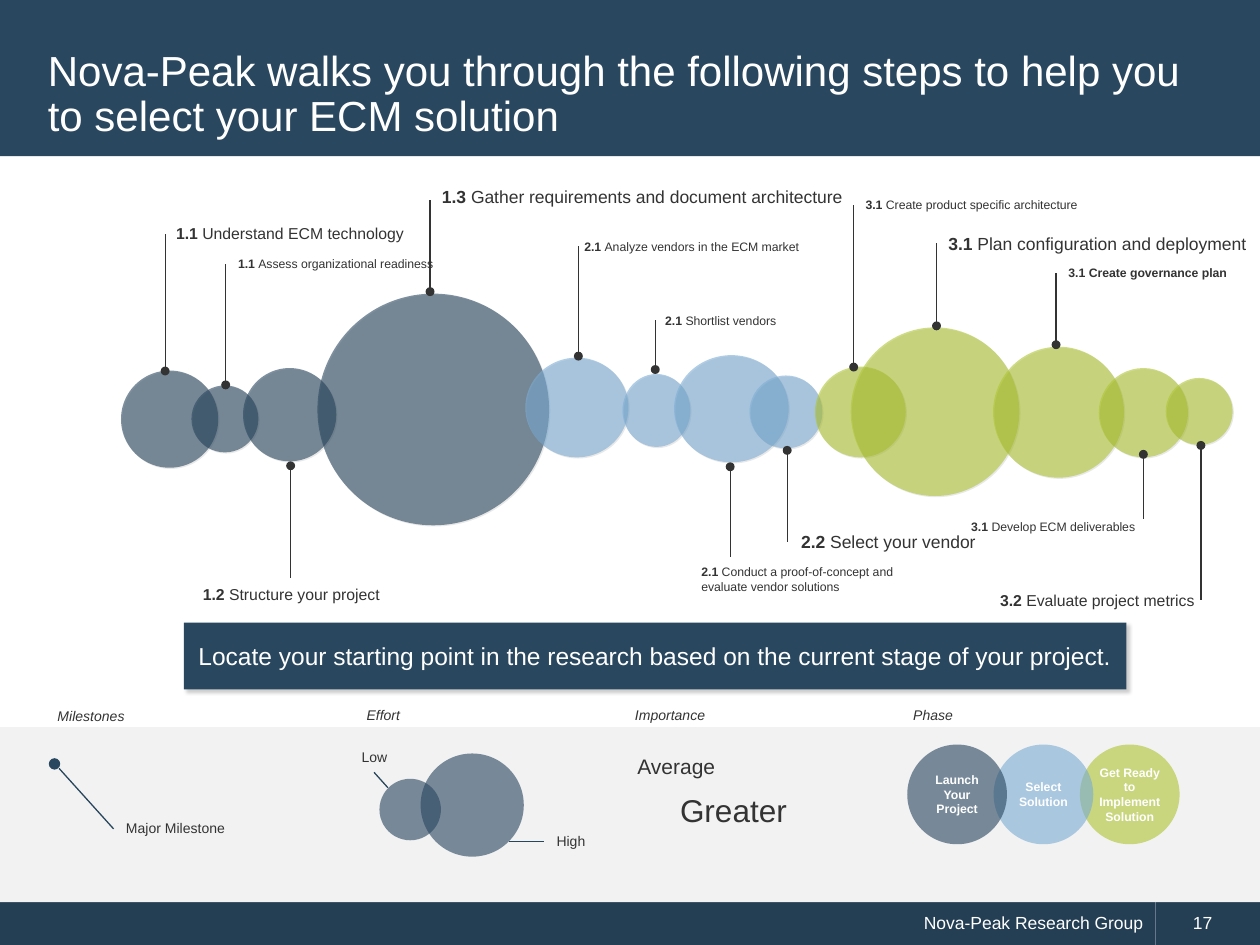
from lxml import etree
from pptx import Presentation
from pptx import util as u
from pptx.dml import color
from pptx.enum import shapes, text
from pptx.oxml import ns

NAVY, SKY, LIME, INK = "29475F", "7CADD4", "B0C534", "333333"
LEADER, DARK, PALE, WHITE = "27465E", "243F54", "F2F2F2", "FFFFFF"
LINE_HEIGHT = {7: 0.56, 8: 0.61, 9: 0.64, 10: 0.69, 12: 0.76, 18: 1.02}
OVAL, RECT = shapes.MSO_SHAPE.OVAL, shapes.MSO_SHAPE.RECTANGLE

# phase colour, bubble box, dot centre, leader end, label place and width, size, number, name
STEPS = [
    (NAVY, (2.44, 4.32, 1.96, 1.96), (3.33, 4.33), 1.57, (3.30, 1.24, 5.23), 9,
     "1.1", "Understand ECM technology"),
    (NAVY, (3.86, 4.62, 1.35, 1.35), (4.55, 4.61), 2.18, (4.55, 1.90, 4.65), 7,
     "1.1", "Assess organizational readiness"),
    (NAVY, (4.90, 4.27, 1.88, 1.88), (5.86, 6.24), 8.51, (3.84, 8.51, 4.19), 9,
     "1.2", "Structure your project"),
    (NAVY, (6.40, 2.77, 4.67, 4.67), (8.67, 2.73), 0.89, (8.66, 0.48, 8.64), 10,
     "1.3", "Gather requirements and document architecture"),
    (SKY, (10.59, 4.06, 2.08, 2.01), (11.66, 4.03), 1.80, (11.53, 1.55, 5.05), 7,
     "2.1", "Analyze vendors in the ECM market"),
    (SKY, (12.55, 4.39, 1.37, 1.47), (13.21, 4.30), 3.30, (13.16, 3.05, 2.87), 7,
     "2.1", "Shortlist vendors"),
    (SKY, (13.59, 4.01, 2.31, 2.16), (14.72, 6.26), 8.08, (13.89, 8.10, 4.45), 7,
     "2.1", "Conduct a proof-of-concept and evaluate vendor solutions"),
    (SKY, (15.11, 4.42, 1.47, 1.47), (15.87, 5.93), 7.77, (15.90, 7.42, 4.06), 10,
     "2.2", "Select your vendor"),
    (LIME, (16.43, 4.24, 1.83, 1.83), (17.21, 4.25), 0.99, (17.20, 0.71, 4.93), 7,
     "3.1", "Create product specific architecture"),
    (LIME, (17.15, 3.45, 3.40, 3.40), (18.88, 3.42), 1.75, (18.87, 1.42, 6.60), 10,
     "3.1", "Plan configuration and deployment"),
    (LIME, (20.02, 3.84, 2.64, 2.64), (21.29, 3.80), 2.36, (21.29, 2.08, 3.84), 7,
     "3.1", "Create governance plan"),
    (LIME, (22.15, 4.27, 1.80, 1.80), (23.05, 6.01), 7.31, (19.33, 7.19, 4.04), 7,
     "3.1", "Develop ECM deliverables"),
    (LIME, (23.50, 4.47, 1.35, 1.35), (24.21, 5.83), 8.94, (19.91, 8.64, 4.55), 9,
     "3.2", "Evaluate project metrics"),
]


def rgb(value):
    return color.RGBColor.from_string(value)


def write(frame, words, size=8, ink=INK, bold=False, italic=False, lead=None,
          align=text.PP_ALIGN.LEFT, spacing=None):
    paragraph = frame.paragraphs[0]
    paragraph.alignment = align
    paragraph.line_spacing = spacing
    runs = [(lead + " ", True)] if lead else []
    for part, heavy in runs + [(words, bold)]:
        run = paragraph.add_run()
        run.text = part
        run.font.name, run.font.size = "Arial", u.Pt(size)
        run.font.bold, run.font.italic = heavy, italic
        run.font.color.rgb = rgb(ink)


def label(slide, x, y, width, words, wrap=False, size=8, **style):
    box = slide.shapes.add_textbox(u.Cm(x), u.Cm(y), u.Cm(width), u.Cm(LINE_HEIGHT[size]))
    box.text_frame.word_wrap = wrap
    box.text_frame.auto_size = text.MSO_AUTO_SIZE.SHAPE_TO_FIT_TEXT
    write(box.text_frame, words, size=size, **style)


def block(slide, kind, x, y, width, height, fill, opacity=None, shadow=None):
    shape = slide.shapes.add_shape(kind, u.Cm(x), u.Cm(y), u.Cm(width), u.Cm(height))
    shape.shadow.inherit = False
    shape.line.fill.background()
    shape.fill.solid()
    shape.fill.fore_color.rgb = rgb(fill)
    properties = shape.element.spPr
    if opacity:
        tone = properties.find(".//" + ns.qn("a:srgbClr"))
        etree.SubElement(tone, ns.qn("a:alpha"), val=str(opacity * 1000))
    if shadow:
        strength, blur, distance, angle = shadow
        cast = etree.SubElement(
            properties.find(ns.qn("a:effectLst")), ns.qn("a:outerShdw"),
            blurRad=str(u.Pt(blur)), dist=str(u.Pt(distance)), dir=str(angle * 60000),
            algn="tl", rotWithShape="0")
        tone = etree.SubElement(cast, ns.qn("a:srgbClr"), val="000000")
        etree.SubElement(tone, ns.qn("a:alpha"), val=str(strength * 1000))
    shape.text_frame.vertical_anchor = text.MSO_ANCHOR.MIDDLE
    shape.text_frame.word_wrap = True
    return shape


def dot(slide, x, y, size, fill):
    block(slide, OVAL, x - size / 2, y - size / 2, size, size, fill)


def leader(slide, x1, y1, x2, y2, ink):
    line = slide.shapes.add_connector(
        shapes.MSO_CONNECTOR.STRAIGHT, u.Cm(x1), u.Cm(y1), u.Cm(x2), u.Cm(y2))
    line.line.color.rgb = rgb(ink)
    line.line.width = u.Pt(0.75)
    etree.SubElement(line.element.spPr, ns.qn("a:effectLst"))


def header(slide, x, y, width, height):
    title = slide.shapes.title
    band = block(slide, RECT, x, y, width, height, NAVY)
    title.element.addprevious(band.element)
    title.left, title.top = u.Cm(x + 0.71), u.Cm(y + 0.71)
    title.width, title.height = u.Cm(width - 1.45), u.Cm(height - 0.76)
    title.text_frame.auto_size = text.MSO_AUTO_SIZE.NONE
    title.text_frame.vertical_anchor = text.MSO_ANCHOR.MIDDLE
    write(title.text_frame, "Nova-Peak walks you through the following steps to help you to "
          "select your ECM solution", size=24, ink=WHITE, spacing=u.Pt(26))


def footer(slide, x, y, width, height):
    number_width = 2.11
    split = width - number_width
    publisher = block(slide, RECT, x, y, split, height, DARK)
    write(publisher.text_frame, "Nova-Peak Research Group", size=10, ink=WHITE,
          align=text.PP_ALIGN.RIGHT)
    number = block(slide, RECT, x + split, y, number_width, height, DARK)
    number.text_frame.margin_left = u.Cm(0.76)
    write(number.text_frame, "17", size=10, ink=WHITE)


def journey(slide, x, y):
    for phase, (left, top, width, height), *_ in STEPS:
        block(slide, OVAL, x + left, y + top, width, height, phase, 60, (14, 0, 1, 45))
    for _, _, (pin_x, pin_y), end, (left, top, width), size, number, name in STEPS:
        label(slide, x + left, y + top, width, name, lead=number, size=size,
              wrap=len(name) > 50, bold=name == "Create governance plan")
        dot(slide, x + pin_x, y + pin_y, 0.18, INK)
        leader(slide, x + pin_x, y + pin_y, x + pin_x, y + end, INK)


def banner(slide, x, y, width, height):
    bar = block(slide, RECT, x, y, width, height, NAVY, shadow=(20, 2, 2, 50))
    write(bar.text_frame, "Locate your starting point in the research based on the current "
          "stage of your project.", size=14, ink=WHITE, align=text.PP_ALIGN.CENTER)


def milestone_key(slide, x, y):
    label(slide, x, y, 1.88, "Milestones", italic=True)
    dot(slide, x + 0.19, y + 1.26, 0.23, NAVY)
    leader(slide, x + 0.28, y + 1.35, x + 1.38, y + 2.57, LEADER)
    label(slide, x + 1.38, y + 2.26, 2.54, "Major Milestone")


def effort_key(slide, x, y):
    label(slide, x, y, 1.19, "Effort", italic=True)
    for left, top, size in ((1.34, 1.07, 2.08), (0.51, 1.58, 1.24)):
        block(slide, OVAL, x + left, y + top, size, size, NAVY, 61)
    leader(slide, x + 0.68, y + 1.76, x + 0.4, y + 1.45, LEADER)
    label(slide, x - 0.1, y + 0.84, 1.04, "Low")
    leader(slide, x + 3.12, y + 2.85, x + 3.83, y + 2.85, LEADER)
    label(slide, x + 3.83, y + 2.54, 1.09, "High")


def importance_key(slide, x, y):
    label(slide, x, y, 1.96, "Importance", italic=True)
    label(slide, x + 0.05, y + 0.94, 2.08, "Average", size=12)
    label(slide, x + 0.91, y + 1.7, 2.69, "Greater", size=18)


def phase_key(slide, x, y):
    label(slide, x, y, 1.32, "Phase", italic=True)
    phases = [("Launch Your Project", NAVY), ("Select Solution", SKY),
              ("Get Ready to Implement Solution", LIME)]
    for place, (name, fill) in reversed(list(enumerate(phases))):
        circle = block(slide, OVAL, x + 0.13 + 1.74 * place, y + 0.89, 2.01, 2.01, fill, 61)
        circle.text_frame.margin_left = circle.text_frame.margin_right = 0
        write(circle.text_frame, name, size=7, ink=WHITE, bold=True,
              align=text.PP_ALIGN.CENTER)


def legend(slide, x, y, width, height):
    block(slide, RECT, x, y + 0.54, width, height - 0.54, PALE)
    milestone_key(slide, x + 0.91, y + 0.02)
    effort_key(slide, x + 7.14, y)
    importance_key(slide, x + 12.55, y)
    phase_key(slide, x + 18.16, y)


def main():
    deck = Presentation()
    deck.slide_width, deck.slide_height = u.Cm(25.4), u.Cm(19.05)
    slide = deck.slides.add_slide(deck.slide_layouts[5])
    footer(slide, 0, 18.14, 25.4, 0.91)
    header(slide, 0, 0, 25.4, 3.15)
    legend(slide, 0, 14.12, 25.4, 4.07)
    journey(slide, 0, 3.15)
    banner(slide, 3.71, 12.55, 19, 1.35)
    deck.save("out.pptx")


if __name__ == "__main__":
    main()
